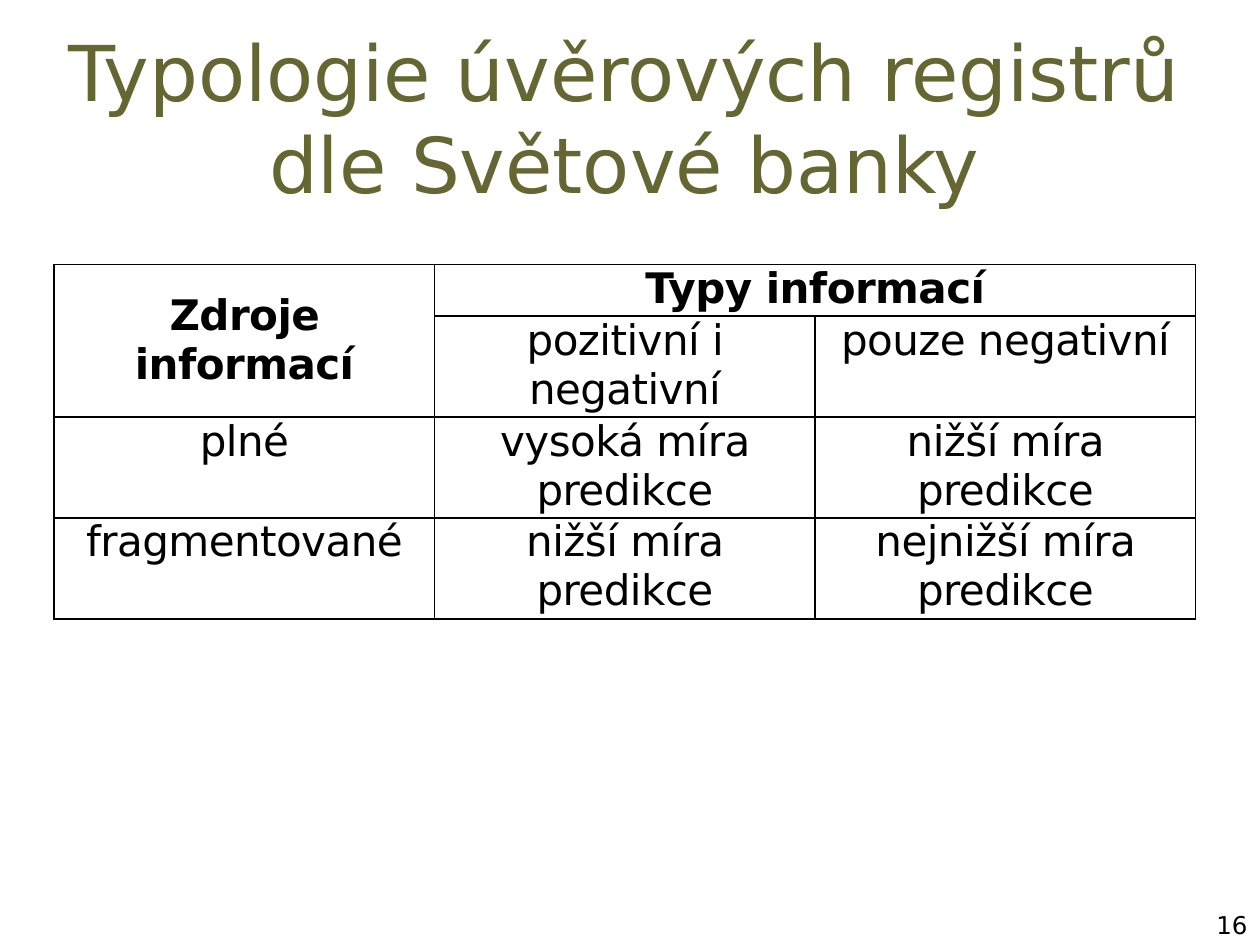
"""Build the slide on the typology of credit registers."""
import pptx
import pptx.dml.color
import pptx.enum.text
import pptx.oxml
import pptx.oxml.ns
import pptx.util
from pptx.util import Inches


def style_run(paragraph, text, size, colour, bold=False):
    run = paragraph.add_run()
    run.text = text
    run.font.name = "DejaVu Sans"
    run.font.size = pptx.util.Pt(size)
    run.font.bold = bold
    run.font.color.rgb = pptx.dml.color.RGBColor.from_string(colour)
    return run


def add_borders(cell, colour):
    properties = cell._tc.get_or_add_tcPr()
    for position, side in enumerate(("lnL", "lnR", "lnT", "lnB")):
        border = pptx.oxml.parse_xml(
            f'<a:{side} {pptx.oxml.ns.nsdecls("a")} w="12700"><a:solidFill>'
            f'<a:srgbClr val="{colour}"/></a:solidFill></a:{side}>'
        )
        properties.insert(position, border)


align = pptx.enum.text.PP_ALIGN
anchor = pptx.enum.text.MSO_ANCHOR

presentation = pptx.Presentation()
presentation.slide_width = Inches(10)
presentation.slide_height = Inches(7.5)
slide = presentation.slides.add_slide(presentation.slide_layouts[5])

heading = slide.shapes.title
heading.left, heading.top = Inches(0.42), Inches(0.3)
heading.width, heading.height = Inches(9.08), Inches(1.25)
heading.text_frame.auto_size = pptx.enum.text.MSO_AUTO_SIZE.NONE
heading.text_frame.vertical_anchor = anchor.MIDDLE
heading_line = heading.text_frame.paragraphs[0]
heading_line.alignment = align.CENTER
style_run(heading_line, "Typologie úvěrových registrů dle Světové banky", 44, "666633")

page_number = slide.shapes.add_textbox(Inches(7.67), Inches(7.17), Inches(2.33), Inches(0.33))
page_number.text_frame.word_wrap = True
page_line = page_number.text_frame.paragraphs[0]
page_line.alignment = align.RIGHT
style_run(page_line, "16", 14, "000000")

register_types = [
    ["Zdroje informací", "Typy informací", ""],
    ["", "pozitivní i negativní", "pouze negativní"],
    ["plné", "vysoká míra predikce", "nižší míra predikce"],
    ["fragmentované", "nižší míra predikce", "nejnižší míra predikce"],
]
row_heights = [0.41, 0.78, 0.78, 0.78]

typology = slide.shapes.add_table(
    4, 3, Inches(0.43), Inches(2.1), Inches(9.06), Inches(sum(row_heights))
).table
typology.first_row = False
typology.horz_banding = False
for column in typology.columns:
    column.width = Inches(3.02)

for row_index, row_texts in enumerate(register_types):
    typology.rows[row_index].height = Inches(row_heights[row_index])
    for column_index, text in enumerate(row_texts):
        cell = typology.cell(row_index, column_index)
        cell.fill.background()
        add_borders(cell, "000000")
        cell.margin_left = cell.margin_right = Inches(0.07)
        cell.margin_top = cell.margin_bottom = 0
        if text:
            cell_line = cell.text_frame.paragraphs[0]
            cell_line.alignment = align.CENTER
            run = style_run(cell_line, text, 24, "000000", bold=row_index == 0)
            run.font._element.set("spc", "-30")

sources_header = typology.cell(0, 0)
sources_header.merge(typology.cell(1, 0))
sources_header.vertical_anchor = anchor.MIDDLE
typology.cell(0, 1).merge(typology.cell(0, 2))

presentation.save("out.pptx")
